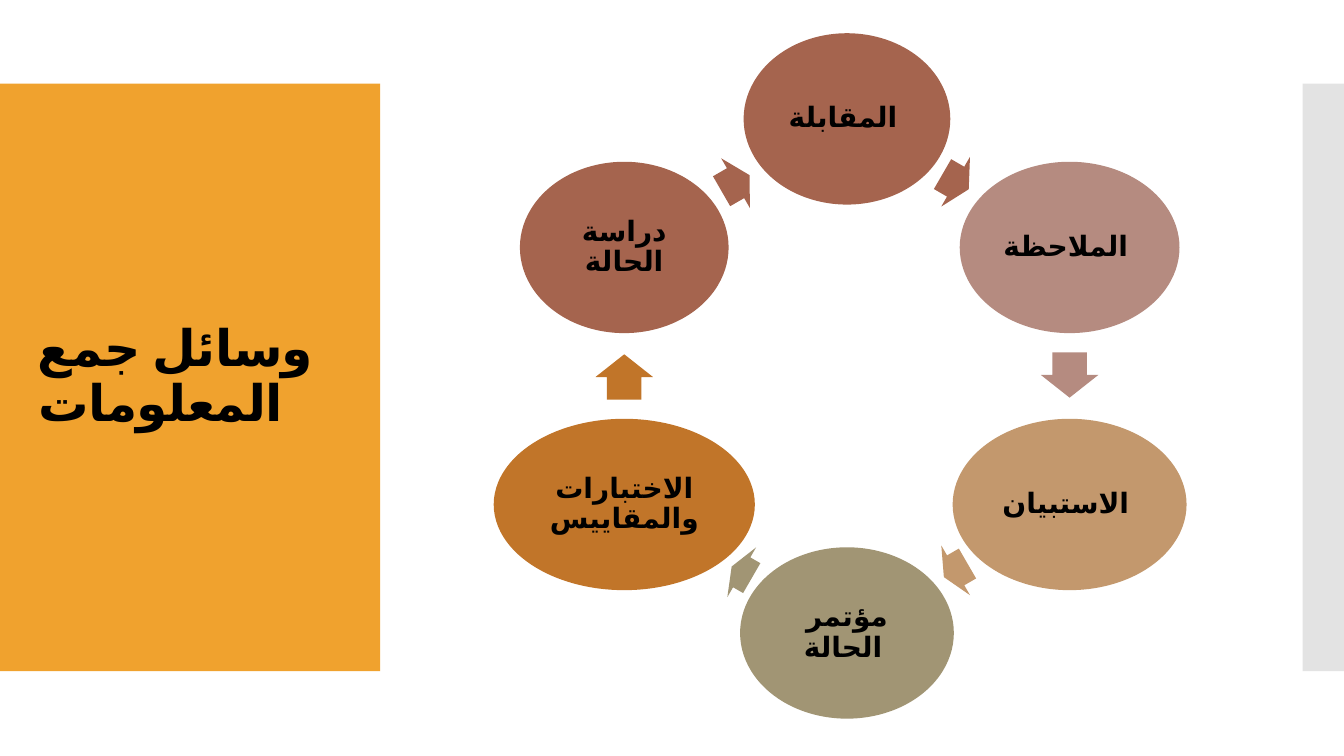
from math import cos, radians, sin

from lxml import etree
from pptx import Presentation
from pptx.dml.color import RGBColor
from pptx.enum import shapes, text
from pptx.oxml.ns import qn
from pptx.util import Inches, Pt

COLORS = {
    "title": "F0A22E", "edge": "C8C8C8", "text": "000000",
    "brick": "A5644E", "rose": "B58B80", "tan": "C3986D",
    "olive": "A19574", "amber": "C17529",
}
W, H = 13.33, 7.5
RING_X, RING_Y, RADIUS = 8.4, 3.73, 2.55
OVAL_HEIGHT, ARROW_HEIGHT = 1.7, 0.57

deck = Presentation()
deck.slide_width, deck.slide_height = Inches(W), Inches(H)
slide = deck.slides.add_slide(deck.slide_layouts[5])


def add_filled(kind, left, top, width, height, color):
    part = slide.shapes.add_shape(kind, *map(Inches, (left, top, width, height)))
    part.shadow.inherit = False
    part.fill.solid()
    part.fill.fore_color.rgb = RGBColor.from_string(COLORS[color])
    part.line.fill.background()
    return part


def write(part, words, size, align, inset):
    frame = part.text_frame
    frame.text = words
    frame_format = {
        "word_wrap": True, "auto_size": text.MSO_AUTO_SIZE.NONE,
        "vertical_anchor": text.MSO_ANCHOR.MIDDLE,
        "margin_left": inset, "margin_right": inset,
        "margin_top": Inches(0.03), "margin_bottom": Inches(0.03),
    }
    for name, value in frame_format.items():
        setattr(frame, name, value)
    paragraph = frame.paragraphs[0]
    paragraph.alignment, paragraph.line_spacing = align, 0.9
    font = paragraph.runs[0].font
    for name, value in {"name": "Calibri", "size": Pt(size), "bold": True}.items():
        setattr(font, name, value)
    font.color.rgb = RGBColor.from_string(COLORS["text"])
    run_format = paragraph.runs[0]._r.get_or_add_rPr()
    run_format.set("lang", "ar-SA")
    return run_format


# Side panels, behind the title
heading = slide.shapes.title
panel_top, panel_height = 0.83, 5.83
for left, width, color in ((0, 3.77, "title"), (12.92, W - 12.92, "edge")):
    panel = add_filled(shapes.MSO_SHAPE.RECTANGLE, left, panel_top, width, panel_height, color)
    heading._element.addprevious(panel._element)
edge_color = panel._element.spPr.find(qn("a:solidFill"))[0]
etree.SubElement(edge_color, qn("a:alpha"), val="50000")

# Title
heading.left, heading.top = Inches(0.28), Inches(1.23)
heading.width, heading.height = Inches(3.22), Inches(5.03)
heading_format = write(heading, "وسائل جمع المعلومات", 36, text.PP_ALIGN.LEFT, Inches(0.1))
heading_format.set("spc", "-60")

# Ring of methods, clockwise from the top:
# words, colour, oval width, arrow width, arrow shift along its direction
methods = [
    ("المقابلة ", "brick", 2.05, 0.3, -0.03),
    ("الملاحظة ", "rose", 2.18, 0.45, -0.01),
    ("الاستبيان ", "tan", 2.32, 0.27, 0.03),
    ("مؤتمر الحالة ", "olive", 2.12, 0.23, -0.07),
    ("الاختبارات والمقاييس", "amber", 2.59, 0.45, -0.01),
    ("دراسة الحالة", "brick", 2.07, 0.32, 0),
]
step = 360 / len(methods)
arrow_radius = RADIUS * cos(radians(step / 2))
for i, (words, color, oval_width, arrow_width, shift) in enumerate(methods):
    angle = radians(i * step)
    x, y = RING_X + RADIUS * sin(angle), RING_Y - RADIUS * cos(angle)
    oval = add_filled(shapes.MSO_SHAPE.OVAL, x - oval_width / 2, y - OVAL_HEIGHT / 2,
                      oval_width, OVAL_HEIGHT, color)
    write(oval, words, 20, text.PP_ALIGN.CENTER, Inches(0.03))

    # Arrow halfway to the next oval
    turn = (i + 0.5) * step
    angle = radians(turn)
    x = RING_X + arrow_radius * sin(angle) + shift * cos(angle)
    y = RING_Y - arrow_radius * cos(angle) + shift * sin(angle)
    arrow = add_filled(shapes.MSO_SHAPE.RIGHT_ARROW, x - arrow_width / 2,
                       y - ARROW_HEIGHT / 2, arrow_width, ARROW_HEIGHT, color)
    arrow.adjustments[0], arrow.adjustments[1] = 0.6, 0.5
    arrow.rotation = turn

deck.save("out.pptx")
